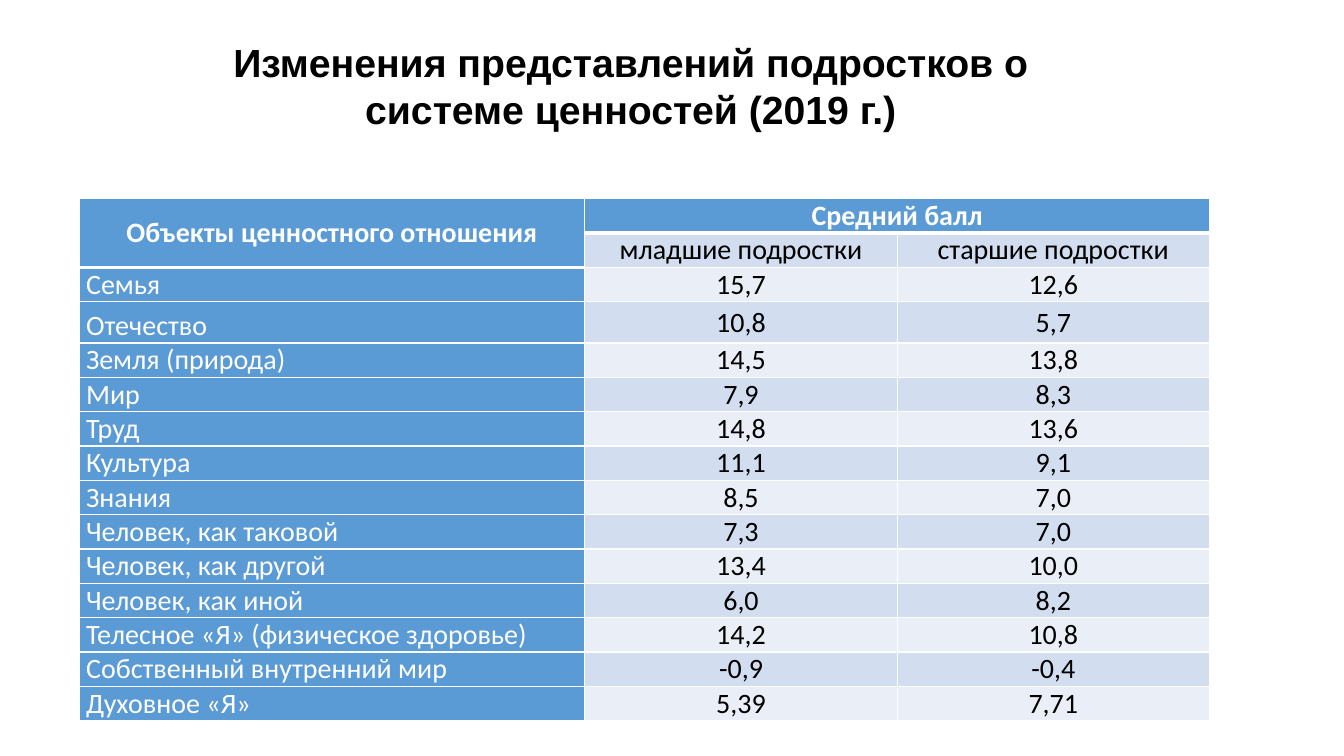
from lxml import etree
from pptx import Presentation
from pptx.dml.color import RGBColor
from pptx.enum.text import MSO_ANCHOR, PP_ALIGN
from pptx.oxml.ns import qn
from pptx.util import Cm, Pt

LEFT, CENTER = PP_ALIGN.LEFT, PP_ALIGN.CENTER
MIDDLE, BOTTOM = MSO_ANCHOR.MIDDLE, MSO_ANCHOR.BOTTOM

COLORS = {
    "white": "FFFFFF",
    "black": "000000",
    "header": "5B9BD5",
    "band_dark": "D2DEEF",
    "band_light": "EAEFF7",
}

TITLE = "Изменения представлений подростков о системе ценностей (2019 г.)"
ROWS = [
    ("Объекты ценностного отношения", "Средний балл", ""),
    ("", "младшие подростки", "старшие подростки"),
    ("Семья", "15,7", "12,6"),
    ("Отечество", "10,8", "5,7"),
    ("Земля (природа)", "14,5", "13,8"),
    ("Мир", "7,9", "8,3"),
    ("Труд", "14,8", "13,6"),
    ("Культура", "11,1", "9,1"),
    ("Знания", "8,5", "7,0"),
    ("Человек, как таковой", "7,3", "7,0"),
    ("Человек, как другой", "13,4", "10,0"),
    ("Человек, как иной", "6,0", "8,2"),
    ("Телесное «Я» (физическое здоровье)", "14,2", "10,8"),
    ("Собственный внутренний мир", "-0,9", "-0,4"),
    ("Духовное «Я»", "5,39", "7,71"),
]
COL_WIDTHS = (12.75, 7.87, 7.87)
ROW_HEIGHT, TALL_ROW_HEIGHT = 0.85, 1.04
TALL_ROW = 3


class SlideBuilder:
    title_font, table_font = "Arial", "Calibri"
    title_size, table_size = 28, 20

    def __init__(self, slide):
        self.slide = slide

    def color(self, name):
        return RGBColor.from_string(COLORS[name])

    def style(self, p, font, size, color, bold, align):
        p.alignment = align
        p.font.name, p.font.size, p.font.bold = font, Pt(size), bold
        p.font.color.rgb = self.color(color)

    def title(self, text, left, top, width, height):
        sp = self.slide.shapes.add_textbox(Cm(left), Cm(top), Cm(width), Cm(height))
        tf = sp.text_frame
        tf.word_wrap, tf.vertical_anchor = True, MIDDLE
        tf.text = text
        self.style(tf.paragraphs[0], self.title_font, self.title_size, "black", True, CENTER)

    def border(self, cell, side, width):
        tc_pr = cell._tc.get_or_add_tcPr()
        ln = etree.SubElement(tc_pr, qn(f"a:ln{side}"), w=str(Pt(width)))
        fill = etree.SubElement(ln, qn("a:solidFill"))
        etree.SubElement(fill, qn("a:srgbClr"), val=COLORS["white"])

    def cell(self, cell, text, row, col):
        is_head = row == 0
        is_label = col == 0
        on_blue = is_head or is_label
        # The thick rule runs under the header, which is two rows deep in column 0
        header_end = 1 if is_label else 0
        for side in "LRTB":
            thick = (side == "B" and row == header_end) or (side == "T" and row == header_end + 1)
            self.border(cell, side, 3 if thick else 1)
        band = "band_dark" if row % 2 else "band_light"
        cell.fill.solid()
        cell.fill.fore_color.rgb = self.color("header" if on_blue else band)
        cell.margin_left = cell.margin_right = Cm(0.18)
        cell.margin_top = cell.margin_bottom = 0
        cell.vertical_anchor = BOTTOM if is_label and not is_head else MIDDLE
        cell.text = text
        self.style(cell.text_frame.paragraphs[0], self.table_font, self.table_size,
                   "white" if on_blue else "black", is_head,
                   LEFT if is_label and not is_head else CENTER)

    def table(self, rows, left, top):
        heights = [TALL_ROW_HEIGHT if i == TALL_ROW else ROW_HEIGHT for i in range(len(rows))]
        table = self.slide.shapes.add_table(
            len(rows), len(COL_WIDTHS), Cm(left), Cm(top),
            Cm(sum(COL_WIDTHS)), Cm(sum(heights))).table
        for column, width in zip(table.columns, COL_WIDTHS):
            column.width = Cm(width)
        for i, (texts, height) in enumerate(zip(rows, heights)):
            table.rows[i].height = Cm(height)
            for j, text in enumerate(texts):
                self.cell(table.cell(i, j), text, i, j)
        table.cell(0, 0).merge(table.cell(1, 0))
        table.cell(0, 1).merge(table.cell(0, 2))


def main():
    prs = Presentation()
    prs.slide_width, prs.slide_height = Cm(33.87), Cm(19.05)
    s = SlideBuilder(prs.slides.add_slide(prs.slide_layouts[6]))

    # Scores by age group
    s.table(ROWS, 1.99, 5.01)

    # Heading
    s.title(TITLE, 5.05, 0.84, 21.69, 2.64)

    prs.save("out.pptx")


if __name__ == "__main__":
    main()
